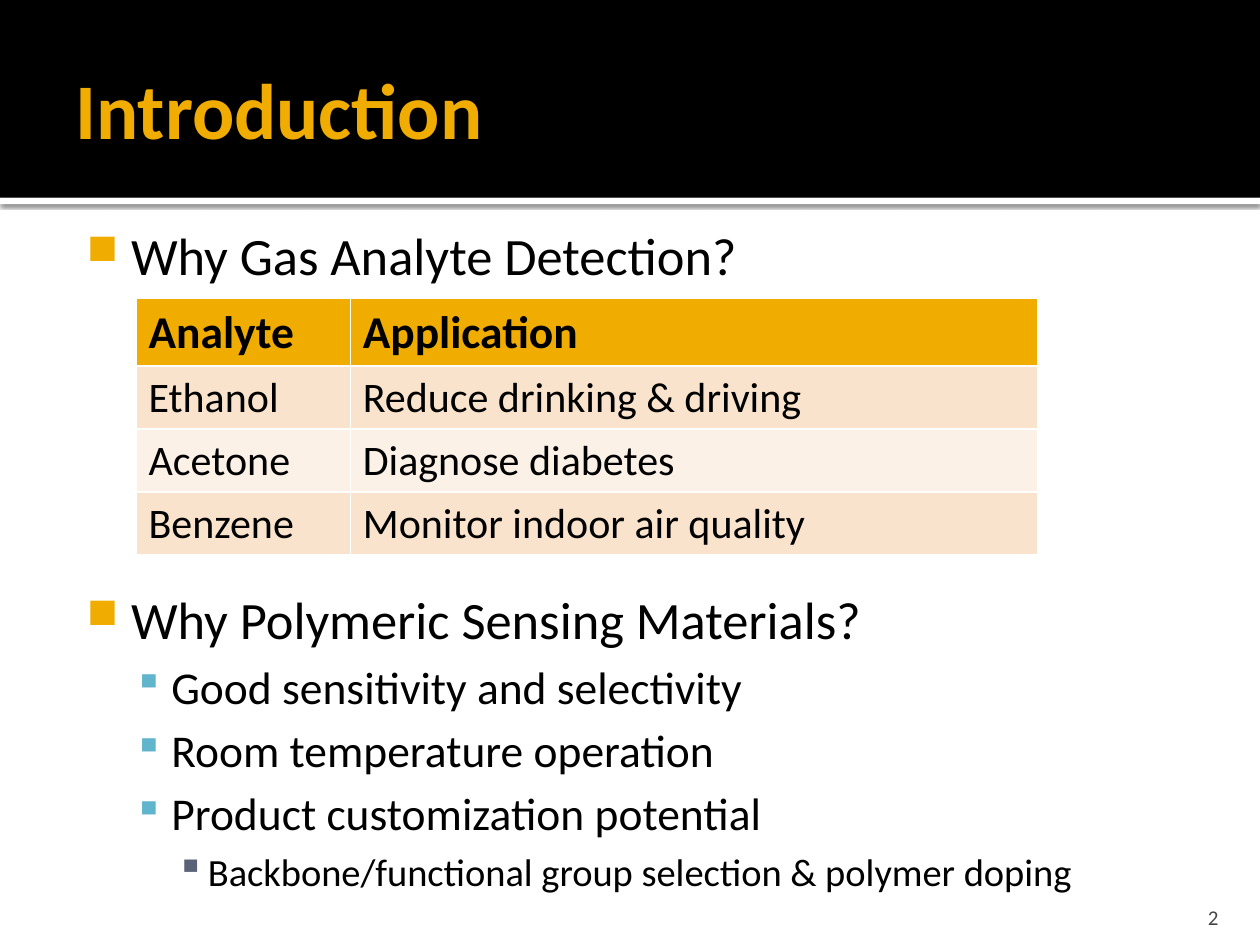
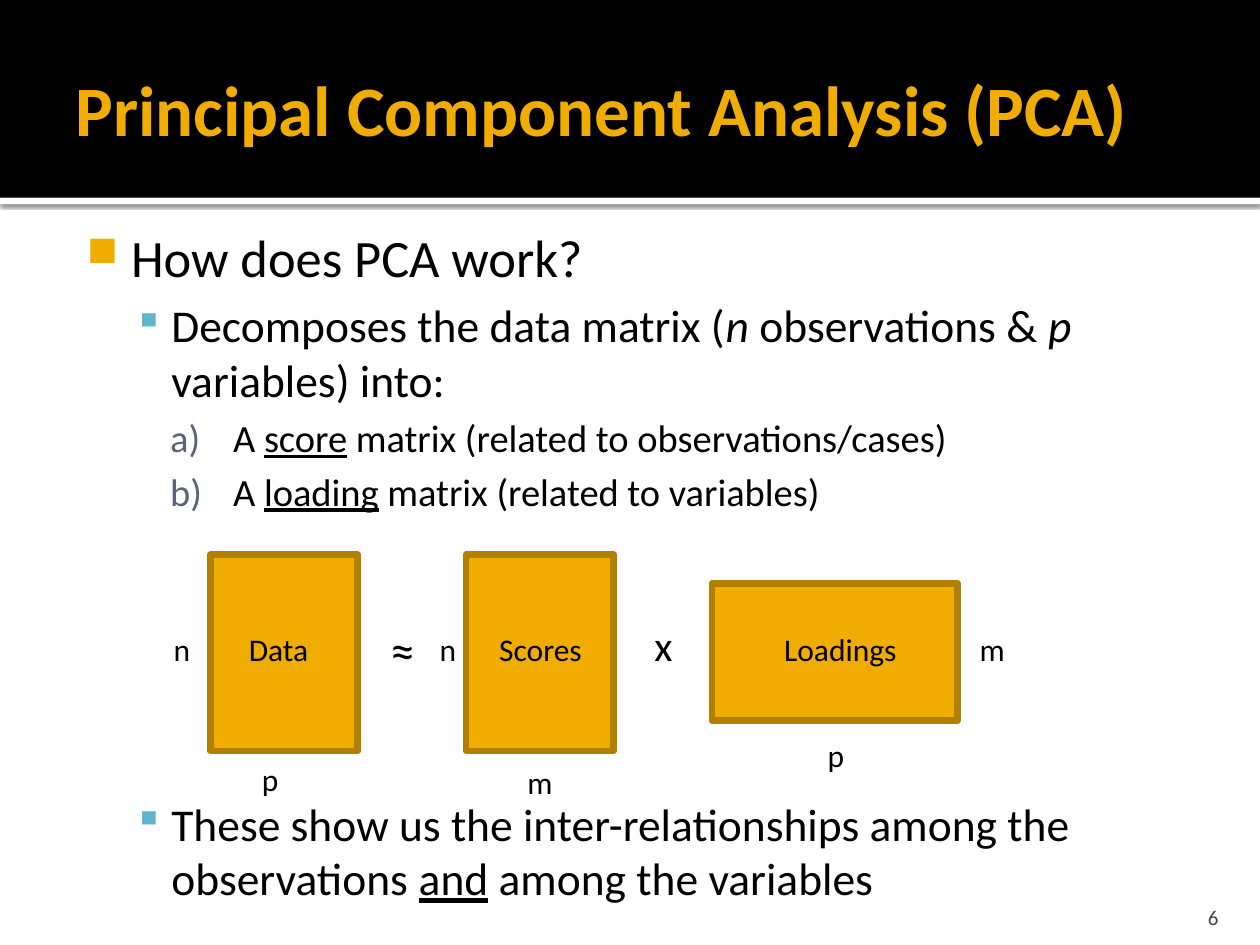
from lxml import etree
from pptx import Presentation
from pptx import util as u
from pptx.dml.color import RGBColor
from pptx.enum import shapes, text
from pptx.oxml import ns

BLACK = RGBColor(0x00, 0x00, 0x00)
WHITE = RGBColor(0xFF, 0xFF, 0xFF)
GOLD = RGBColor(0xF0, 0xAD, 0x00)
DARK_GOLD = RGBColor(0xB2, 0x80, 0x00)
TEAL = RGBColor(0x60, 0xB5, 0xCC)
SLATE = RGBColor(0x5A, 0x63, 0x78)
GREY = RGBColor(0x45, 0x45, 0x45)
PEACH = RGBColor(0xF9, 0xE3, 0xCC)
PALE_PEACH = RGBColor(0xFC, 0xF1, 0xE7)

FONT = "Calibri"
CENTER, RIGHT = text.PP_ALIGN.CENTER, text.PP_ALIGN.RIGHT
MIDDLE, BOTTOM = text.MSO_ANCHOR.MIDDLE, text.MSO_ANCHOR.BOTTOM

BULLETS = {
    "topic": dict(level=0, size=30, left=0.48, hanging=0.35, before=0,
                  color=GOLD, percent=80, mark=("buChar", "char", "■")),
    "point": dict(level=1, size=26, left=0.8, hanging=0.3, before=5,
                  color=TEAL, percent=90, mark=("buChar", "char", "▪")),
    "detail": dict(level=2, size=22, left=1.09, hanging=0.25, before=4.4,
                   color=SLATE, percent=100, mark=("buChar", "char", "▪")),
    "letter": dict(level=2, size=22, left=1.29, hanging=0.5, before=4.4,
                   color=SLATE, percent=100, mark=("buAutoNum", "type", "alphaLcParenR")),
}


def add_text(slide, box, words, size, color=BLACK, bold=False, align=None,
             anchor=None, margins=(0.1, 0.05, 0.1, 0.05), wrap=False):
    frame = slide.shapes.add_textbox(*map(u.Inches, box)).text_frame
    frame.word_wrap = wrap
    frame.vertical_anchor = anchor
    for side, margin in zip(("left", "top", "right", "bottom"), margins):
        setattr(frame, f"margin_{side}", u.Inches(margin))
    paragraph = frame.paragraphs[0]
    paragraph.alignment = align
    run = paragraph.add_run()
    run.text = words
    for name, value in dict(name=FONT, size=u.Pt(size), bold=bold).items():
        setattr(run.font, name, value)
    run.font.color.rgb = color


def add_bullets(slide, box, items):
    frame = slide.shapes.add_textbox(*map(u.Inches, box)).text_frame
    frame.word_wrap = True
    frame.margin_left, frame.margin_top = u.Inches(0.06), u.Inches(0.1)
    for index, (kind, gap, runs) in enumerate(items):
        style = BULLETS[kind]
        paragraph = frame.add_paragraph() if index else frame.paragraphs[0]
        paragraph.level = style["level"]
        paragraph.space_before = u.Pt(gap or style["before"])
        properties = paragraph._p.get_or_add_pPr()
        properties.set("marL", str(u.Inches(style["left"])))
        properties.set("indent", str(-u.Inches(style["hanging"])))
        bullet_color = etree.SubElement(properties, ns.qn("a:buClr"))
        etree.SubElement(bullet_color, ns.qn("a:srgbClr"), val=str(style["color"]))
        etree.SubElement(properties, ns.qn("a:buSzPct"), val=str(style["percent"] * 1000))
        tag, attribute, value = style["mark"]
        etree.SubElement(properties, ns.qn(f"a:{tag}"), {attribute: value})
        for words, *emphasis in runs:
            run = paragraph.add_run()
            run.text = words
            run.font.name, run.font.size = FONT, u.Pt(style["size"])
            run.font.color.rgb = BLACK
            for name in emphasis:
                setattr(run.font, name, True)


presentation = Presentation()
presentation.slide_width, presentation.slide_height = u.Inches(10), u.Inches(7.5)

pages = [
    ("Introduction", 45, "2", (0.5, 1.67, 9.08, 5.67), [
        ("topic", None, [("Why Gas Analyte Detection?",)]),
        ("topic", 172, [("Why Polymeric Sensing Materials?",)]),
        ("point", None, [("Good sensitivity and selectivity",)]),
        ("point", None, [("Room temperature operation",)]),
        ("point", None, [("Product customization potential",)]),
        ("detail", None, [("Backbone/functional group selection & polymer doping",)]),
    ]),
    ("Principal Component Analysis (PCA)", 40.5, "6", (0.5, 1.69, 8.25, 5.06), [
        ("topic", None, [("How does PCA work?",)]),
        ("point", None, [("Decomposes the data matrix (",), ("n", "italic"),
                         (" observations & ",), ("p", "italic"), (" variables) into:",)]),
        ("letter", None, [("A ",), ("score", "underline"),
                          (" matrix (related to observations/cases)",)]),
        ("letter", None, [("A ",), ("loading", "underline"),
                          (" matrix (related to variables)",)]),
        ("point", 161, [("These show us the inter-relationships among the observations ",),
                        ("and", "underline"), (" among the variables",)]),
    ]),
]

slides = []
for title, title_size, number, body_box, items in pages:
    slide = presentation.slides.add_slide(presentation.slide_layouts[6])
    slides.append(slide)
    for top, height, color in ((1.57, 0.05, WHITE), (0, 1.57, BLACK)):
        band = slide.shapes.add_shape(shapes.MSO_SHAPE.RECTANGLE, 0, u.Inches(top),
                                      presentation.slide_width, u.Inches(height))
        band.shadow.inherit = False
        band.fill.solid()
        band.fill.fore_color.rgb = color
        band.line.fill.background()
        if color == WHITE:
            effects = band._element.spPr.find(ns.qn("a:effectLst"))
            shadow = etree.SubElement(effects, ns.qn("a:outerShdw"), blurRad=str(u.Pt(2.5)),
                                      dist=str(u.Pt(0.8)), dir="5400000", algn="tl",
                                      rotWithShape="0")
            shade = etree.SubElement(shadow, ns.qn("a:srgbClr"), val=str(BLACK))
            etree.SubElement(shade, ns.qn("a:alpha"), val="60000")
    add_text(slide, (0.5, 0.17, 9, 1.37), title, title_size, GOLD, bold=True,
             anchor=MIDDLE, margins=(0.1, 0.05, 0.05, 0.05), wrap=True)
    add_text(slide, (8.97, 7.08, 0.8, 0.3), number, 12, GREY, align=RIGHT,
             anchor=BOTTOM, margins=(0.1, 0.05, 0.1, 0), wrap=True)
    add_bullets(slide, body_box, items)

introduction, pca = slides

analytes = [
    ("Analyte", "Application"),
    ("Ethanol", "Reduce drinking & driving"),
    ("Acetone", "Diagnose diabetes"),
    ("Benzene", "Monitor indoor air quality"),
]
table = introduction.shapes.add_table(
    len(analytes), 2, *map(u.Inches, (1.08, 2.37, 7.16, 2.03))).table
for column, width in zip(table.columns, (1.7, 5.46)):
    column.width = u.Inches(width)
for row_index, values in enumerate(analytes):
    header = row_index == 0
    table.rows[row_index].height = u.Inches(0.53 if header else 0.5)
    fill = GOLD if header else PEACH if row_index % 2 else PALE_PEACH
    for cell, value in zip(table.rows[row_index].cells, values):
        cell.text = value
        cell.fill.solid()
        cell.fill.fore_color.rgb = fill
        font = cell.text_frame.paragraphs[0].runs[0].font
        for name, setting in dict(name=FONT, size=u.Pt(26 if header else 24),
                                  bold=header).items():
            setattr(font, name, setting)
        font.color.rgb = BLACK

for box in ((1.67, 4.4, 1.17, 1.56), (3.7, 4.4, 1.17, 1.56), (5.65, 4.63, 1.95, 1.09)):
    matrix = pca.shapes.add_shape(shapes.MSO_SHAPE.RECTANGLE, *map(u.Inches, box))
    matrix.shadow.inherit = False
    matrix.fill.solid()
    matrix.fill.fore_color.rgb = GOLD
    matrix.line.color.rgb = DARK_GOLD
    matrix.line.width = u.Pt(3.78)

labels = [
    ("≈", 28, 2.92, 4.87, 0.55), ("x", 24, 4.95, 4.87, 0.63),
    ("Data", 18, 1.82, 4.95, 0.78), ("Scores", 18, 3.78, 4.95, 1.02),
    ("Loadings", 18, 5.89, 4.95, 1.56),
    ("n", 18, 1.28, 4.95, 0.31), ("p", 18, 1.98, 5.98, 0.31),
    ("n", 18, 3.39, 4.95, 0.31), ("m", 18, 4.01, 6.01, 0.55),
    ("m", 18, 7.6, 4.95, 0.55), ("p", 18, 6.47, 5.79, 0.31),
]
for words, size, left, top, width in labels:
    add_text(pca, (left, top, width, round(size / 50 + 0.04, 2)), words, size, align=CENTER)

presentation.save("out.pptx")
